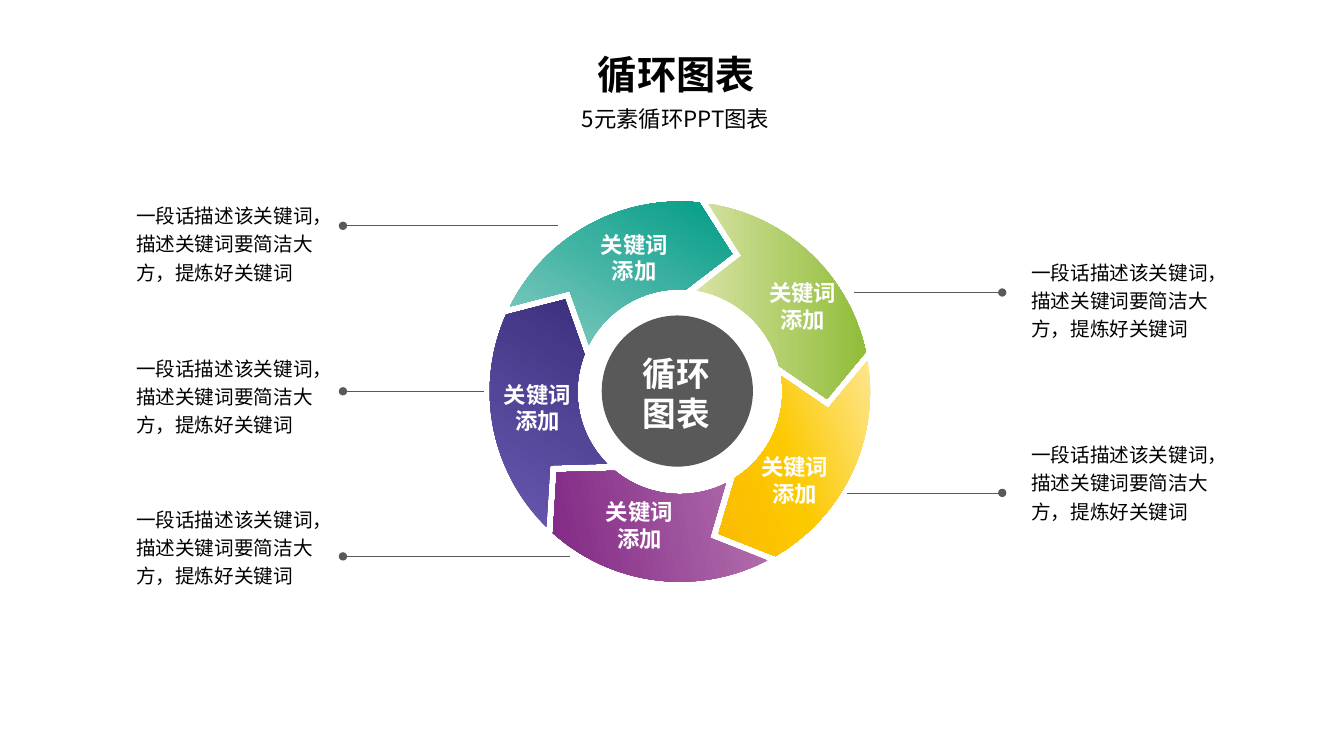
from copy import deepcopy
from math import cos, radians, sin

from lxml.etree import SubElement
from pptx import Presentation
from pptx.dml.color import RGBColor
from pptx.enum.shapes import MSO_CONNECTOR, MSO_SHAPE
from pptx.enum.text import MSO_ANCHOR, MSO_AUTO_SIZE, PP_ALIGN
from pptx.oxml.ns import qn
from pptx.util import Cm, Pt

# Content
TITLE = "循环图表"
SUB = "5元素循环PPT图表"
HUB = "循环\n图表"
KEY = "关键词\n添加"
NOTE = "一段话描述该关键词，描述关键词要简洁大方，提炼好关键词"

FONT = "Noto Sans CJK SC"
HEX = {
    "text": "000000", "white": "FFFFFF", "gray": "595959",
    "lime1": "D7E2A3", "lime2": "B0CE69", "lime3": "90BD39",
    "gold1": "FDE68D", "gold2": "FCC900", "gold3": "FBBB01",
    "plum1": "B370AE", "plum2": "822985",
    "blue1": "695AB2", "blue2": "534597", "blue3": "3A2E7A",
    "teal1": "86CCC1", "teal2": "3EB2A2", "teal3": "009C87",
}

# Segments clockwise from the top: stops, clockwise gradient angle, label corner
PARTS = [
    ([(0, "lime1"), (54, "lime2"), (100, "lime3")], 0, (19.1, 6.91)),
    ([(0, "gold1"), (54, "gold2"), (100, "gold3")], 160, (18.9, 11.3)),
    ([(0, "plum1"), (100, "plum2")], 170, (14.99, 12.42)),
    ([(0, "blue1"), (47, "blue2"), (100, "blue3")], 300, (12.42, 9.47)),
    ([(0, "teal1"), (54, "teal2"), (100, "teal3")], 300, (14.86, 5.69)),
]

# Notes: left, top, then the line's dot x, ring x and y
NOTES = [
    (3.18, 4.9, 8.64, 14.07, 5.69),
    (3.18, 8.74, 8.64, 12.19, 9.86),
    (3.18, 12.55, 8.64, 14.35, 14.02),
    (25.73, 6.32, 25.25, 21.51, 7.37),
    (25.73, 10.92, 25.25, 21.34, 12.42),
]

# Ring geometry in cm and degrees
MID = (17.13, 9.87)
OUTER, INNER, TIP, NOTCH = 4.79, 2.58, 3.71, 3.76
STEP = 360 / len(PARTS)


def color(name):
    return RGBColor.from_string(HEX[name])


def write(box, text, size, tone="text", bold=False, align=PP_ALIGN.LEFT,
          wrap=False, space=1.0):
    frame = box.text_frame
    frame.text = text
    frame.word_wrap = wrap
    frame.auto_size = MSO_AUTO_SIZE.SHAPE_TO_FIT_TEXT
    frame.vertical_anchor = MSO_ANCHOR.TOP
    for para in frame.paragraphs:
        para.alignment = align
        para.line_spacing = space
        para.space_before = Pt(0)
        for run in para.runs:
            run.font.size = Pt(size)
            run.font.bold = bold
            run.font.color.rgb = color(tone)
            run.font.name = FONT
            SubElement(run.font._element, qn("a:ea")).set("typeface", FONT)


def place(box, left, top, width, height):
    box.left, box.top = Cm(left), Cm(top)
    box.width, box.height = Cm(width), Cm(height)


def add_text(left, top, width, height, *args, **style):
    box = shapes.add_textbox(Cm(left), Cm(top), Cm(width), Cm(height))
    write(box, *args, **style)


def polar(radius, angle):
    turn = radians(angle)
    return (Cm(MID[0] + radius * sin(turn)), Cm(MID[1] - radius * cos(turn)))


def arc(radius, start, end, count=40):
    return [polar(radius, start + (end - start) * i / count)
            for i in range(count + 1)]


def add_part(index, stops, angle):
    base = index * STEP
    tail = base + STEP
    points = arc(OUTER, base + 8.6, tail + 5.9)
    points.append(polar(TIP, tail + 20.8))
    points += arc(INNER, tail + 3.4, base + 9.3)
    points.append(polar(NOTCH, base + 24.4))
    form = shapes.build_freeform(*points[0], scale=1.0)
    form.add_line_segments(points[1:], close=True)
    part = form.convert_to_shape()
    part.shadow.inherit = False
    part.line.fill.background()
    part.fill.gradient()
    part.fill.gradient_angle = (360 - angle) % 360
    group = part._element.spPr.find(".//" + qn("a:gsLst"))
    while len(group) < len(stops):
        group.append(deepcopy(group[-1]))
    for stop, (spot, name) in zip(part.fill.gradient_stops, stops):
        stop.position = spot / 100
        stop.color.rgb = color(name)


def add_line(dot, ring, y):
    line = shapes.add_connector(
        MSO_CONNECTOR.STRAIGHT, Cm(dot), Cm(y), Cm(ring), Cm(y))
    line.line.color.rgb = color("gray")
    line.line.width = Pt(0.5)
    SubElement(line.line._get_or_add_ln(), qn("a:headEnd")).set("type", "oval")
    SubElement(line._element.spPr, qn("a:effectLst"))


deck = Presentation()
deck.slide_width, deck.slide_height = Cm(33.86), Cm(19.05)
slide = deck.slides.add_slide(deck.slide_layouts[0])
shapes = slide.shapes

# Heading
head, sub = slide.placeholders
place(head, 14.81, 1.14, 4.5, 1.45)
write(head, TITLE, 28, bold=True)
place(sub, 14.4, 2.51, 5.28, 0.94)
write(sub, SUB, 16, wrap=True)

# Ring with its labels
for index, (stops, angle, spot) in enumerate(PARTS):
    add_part(index, stops, angle)
for stops, angle, spot in PARTS:
    add_text(*spot, 2.24, 1.63, KEY, 16, "white", True, PP_ALIGN.CENTER)

# Hub
hub = shapes.add_shape(
    MSO_SHAPE.OVAL, Cm(15.16), Cm(7.95), Cm(3.81), Cm(3.81))
hub.shadow.inherit = False
hub.fill.solid()
hub.fill.fore_color.rgb = color("gray")
hub.line.fill.background()
add_text(15.95, 8.76, 2.24, 2.31, HUB, 24, "white", True)

# Notes with their lines
for left, top, dot, ring, y in NOTES:
    add_line(dot, ring, y)
    add_text(left, top, 5.36, 2.36, NOTE, 14, wrap=True, space=1.2)

deck.save("out.pptx")
